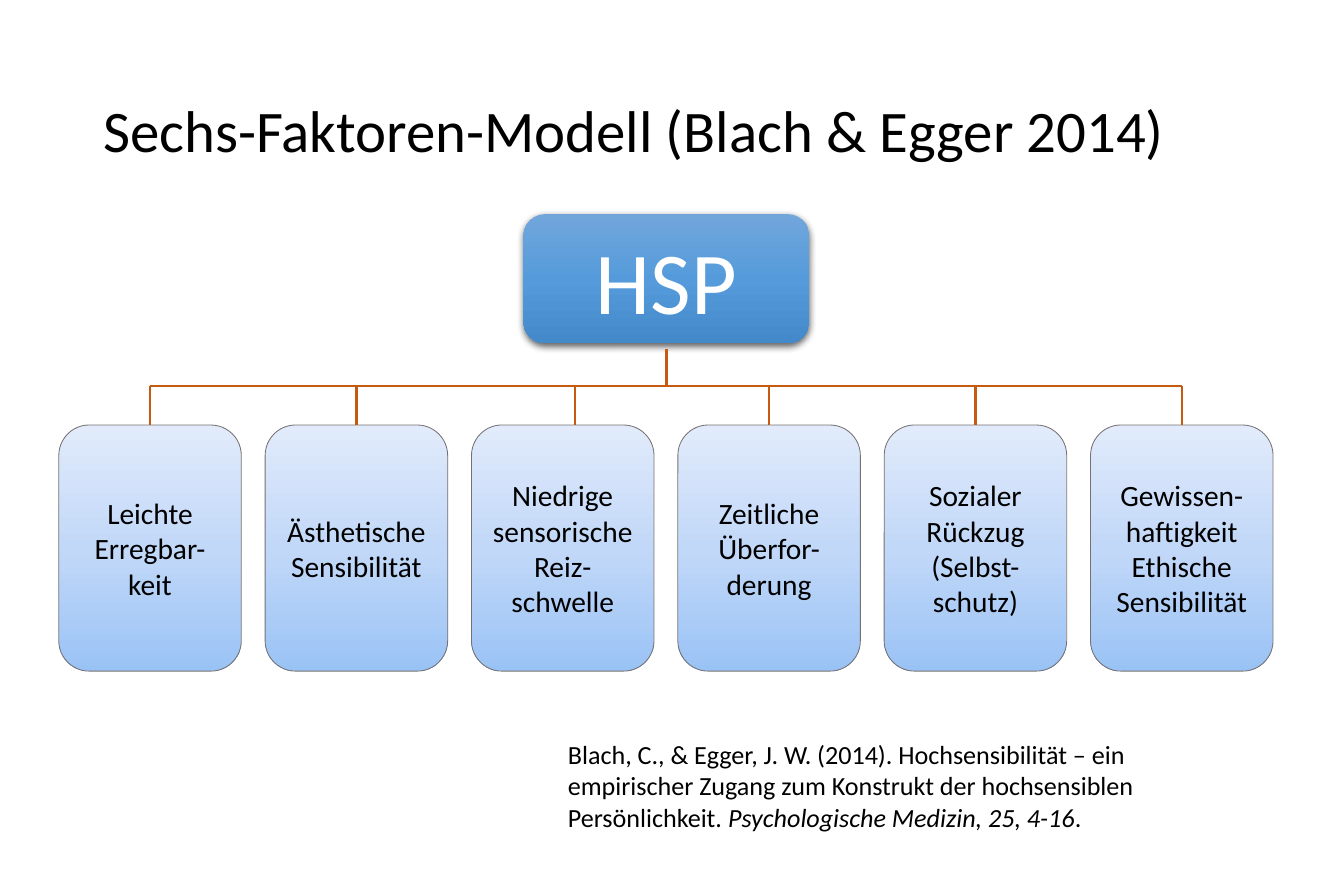
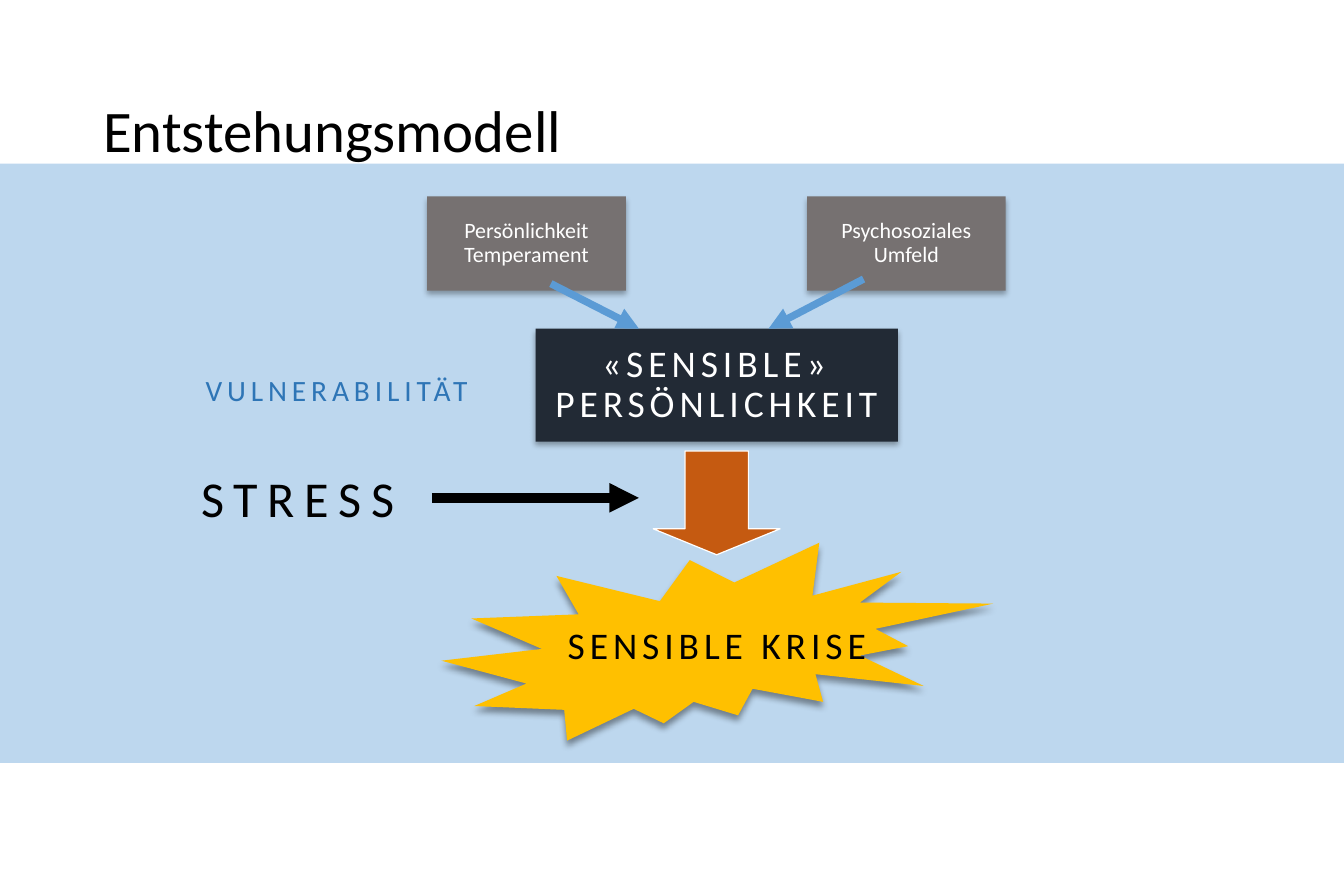
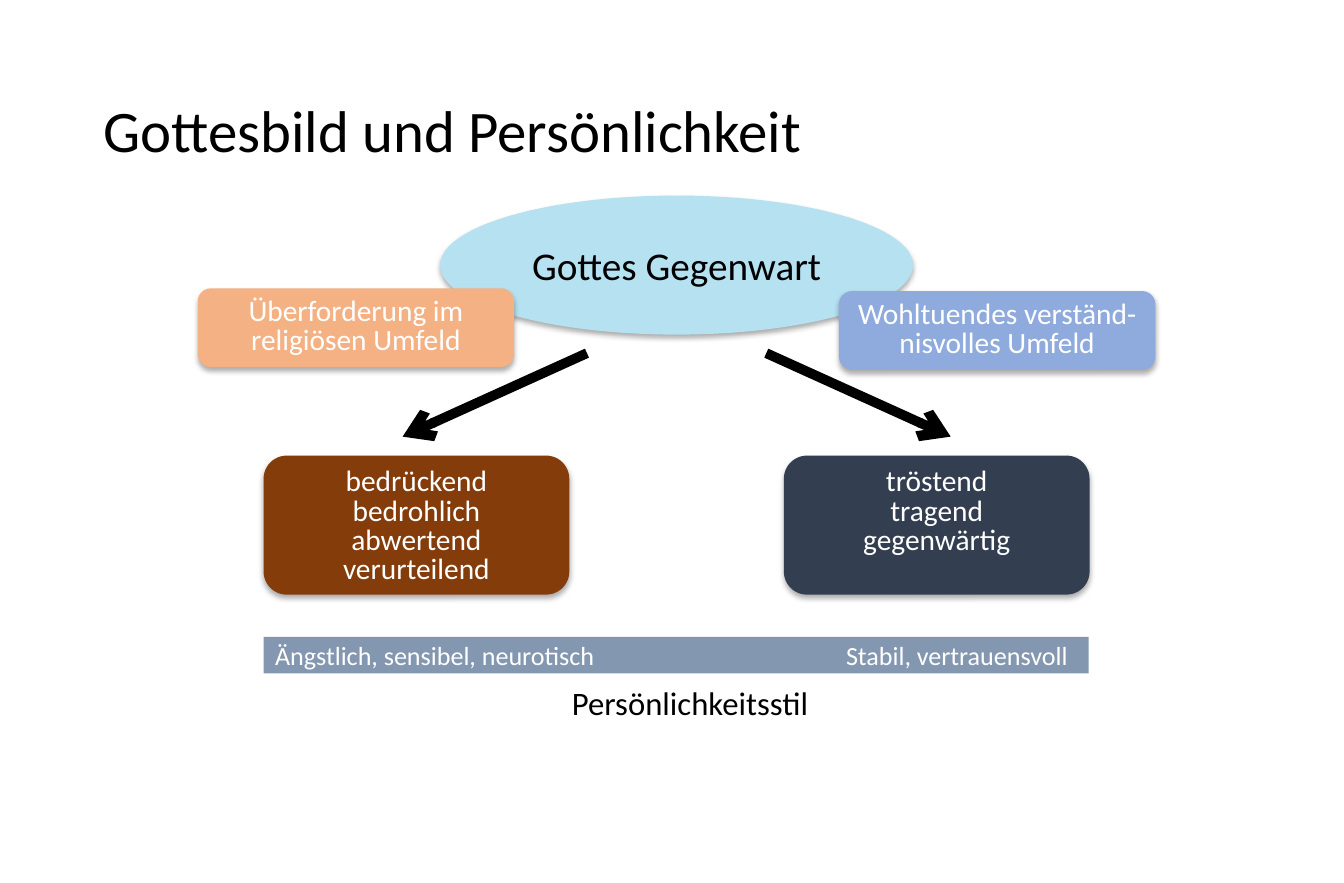
from typing import NamedTuple

from lxml import etree
from pptx import Presentation
from pptx.dml.color import RGBColor
from pptx.enum import shapes, text
from pptx.oxml import ns
from pptx.util import Cm, Pt

FONT = "Calibri"
BLACK = RGBColor(0x00, 0x00, 0x00)
WHITE = RGBColor(0xFF, 0xFF, 0xFF)
GREY = RGBColor(0x76, 0x71, 0x71)
ORANGE = RGBColor(0xC5, 0x5A, 0x11)
BLUE = RGBColor(0x5B, 0x9B, 0xD5)
DEEP_BLUE = RGBColor(0x2E, 0x75, 0xB6)
PALE_BLUE = RGBColor(0xBD, 0xD7, 0xEE)
NIGHT = RGBColor(0x22, 0x2A, 0x35)
GOLD = RGBColor(0xFF, 0xC0, 0x00)
SKY = RGBColor(0xB5, 0xE1, 0xF1)
BROWN = RGBColor(0x84, 0x3C, 0x0B)
SLATE = RGBColor(0x33, 0x3F, 0x50)
STEEL = RGBColor(0x84, 0x97, 0xB0)
PEACH = RGBColor(0xF4, 0xB1, 0x83)
LAVENDER = RGBColor(0x8F, 0xAA, 0xDC)

# Gradient stops from top to bottom
HSP_STOPS = [RGBColor(0x71, 0xA6, 0xDB), RGBColor(0x55, 0x9B, 0xDB), RGBColor(0x44, 0x8A, 0xCA)]
FACTOR_STOPS = [RGBColor(0xE1, 0xEB, 0xFB), RGBColor(0xC2, 0xD8, 0xF8), RGBColor(0x9A, 0xC3, 0xF5)]

# Shadows straight down: opacity in percent, blur and distance in points
SOFT_SHADOW = (32, 3.5, 2.2)
SEAL_SHADOW = (40, 4, 3)
HSP_SHADOW = (63, 4.5, 1.5)

SHAPE = shapes.MSO_SHAPE
LEFT, CENTER, RIGHT = text.PP_ALIGN.LEFT, text.PP_ALIGN.CENTER, text.PP_ALIGN.RIGHT
TOP, MIDDLE = text.MSO_ANCHOR.TOP, text.MSO_ANCHOR.MIDDLE

FACTORS = [
    ["Leichte Erregbar-keit"],
    ["Ästhetische Sensibilität"],
    ["Niedrige sensorische Reiz-schwelle"],
    ["Zeitliche Überfor-derung"],
    ["Sozialer", "Rückzug", "(Selbst-schutz)"],
    ["Gewissen-haftigkeit", "Ethische", "Sensibilität"],
]
DROP_SHIFTS = [0, 0, 0.26, 0, 0, 0]


class Box(NamedTuple):
    """Lengths in centimetres."""
    left: float
    top: float
    width: float
    height: float

    def inner(self, left, top, width, height):
        return Box(self.left + left, self.top + top, width, height)

    def point(self, x, y):
        return self.left + x, self.top + y

    def mirrored(self, other):
        """Reflects another box about the vertical axis of this one."""
        return Box(2 * self.left + self.width - other.left - other.width,
                   other.top, other.width, other.height)

    def emu(self):
        return [Cm(length) for length in self]


def add_element(parent, tag, **attributes):
    return etree.SubElement(parent, ns.qn(tag), {k: str(v) for k, v in attributes.items()})


def write(holder, paragraphs, size, color=BLACK, align=LEFT, anchor=TOP,
          spacing=None, tracking=0, wrap=True):
    """A paragraph is a string or a list of (string, italic) runs; \\n breaks a line."""
    frame = holder.text_frame
    frame.word_wrap = wrap
    frame.vertical_anchor = anchor
    for index, content in enumerate(paragraphs):
        paragraph = frame.paragraphs[0] if index == 0 else frame.add_paragraph()
        paragraph.alignment = align
        paragraph.line_spacing = spacing
        runs = [(content, False)] if isinstance(content, str) else content
        for words, italic in runs:
            for number, line in enumerate(words.split("\n")):
                if number:
                    paragraph.add_line_break()
                run = paragraph.add_run()
                run.text = line
                run.font.name = FONT
                run.font.size = Pt(size)
                run.font.italic = italic
                run.font.color.rgb = color
                if tracking:
                    run._r.get_or_add_rPr().set("spc", str(tracking * 100))


def add_label(slide, box, paragraphs, size, **style):
    write(slide.shapes.add_textbox(*box.emu()), paragraphs, size, **style)


def add_figure(slide, kind, box, fill, line=None, line_width=0.75, shadow=None):
    """A list as fill gives a vertical gradient."""
    figure = slide.shapes.add_shape(kind, *box.emu())
    if isinstance(fill, list):
        figure.fill.gradient()
        figure.fill.gradient_angle = 270
        stops = figure._element.spPr.find(ns.qn("a:gradFill")).find(ns.qn("a:gsLst"))
        for stop in list(stops):
            stops.remove(stop)
        for index, color in enumerate(fill):
            stop = add_element(stops, "a:gs", pos=index * 100000 // (len(fill) - 1))
            add_element(stop, "a:srgbClr", val=color)
    else:
        figure.fill.solid()
        figure.fill.fore_color.rgb = fill
    if line is None:
        figure.line.fill.background()
    else:
        figure.line.color.rgb = line
        figure.line.width = Pt(line_width)
    figure.shadow.inherit = False
    if shadow:
        opacity, blur, distance = shadow
        effects = figure._element.spPr.find(ns.qn("a:effectLst"))
        outer = add_element(effects, "a:outerShdw", blurRad=int(Pt(blur)), dist=int(Pt(distance)),
                            dir=5400000, algn="ctr", rotWithShape=0)
        shade = add_element(outer, "a:srgbClr", val=BLACK)
        add_element(shade, "a:alpha", val=opacity * 1000)
    return figure


def add_line(slide, start, end, color, width, head=None):
    line = slide.shapes.add_connector(
        shapes.MSO_CONNECTOR.STRAIGHT, *(Cm(length) for length in (*start, *end)))
    line.line.color.rgb = color
    line.line.width = Pt(width)
    if head:
        add_element(line.line._get_or_add_ln(), "a:tailEnd", type=head)
    add_element(line._element.spPr, "a:effectLst")


def add_title(slide, title):
    add_label(slide, Box(1.98, 1.83, 25.02, 2.08), [title], 36, anchor=MIDDLE, spacing=0.9)


def add_factor_tree(slide, box):
    root = box.inner(10.03, 0, 6.17, 2.79)
    hsp = add_figure(slide, SHAPE.ROUNDED_RECTANGLE, root, HSP_STOPS, shadow=HSP_SHADOW)
    write(hsp, ["HSP"], 54, WHITE, CENTER, MIDDLE)

    card_width, card_height, bar_gap = 3.94, 5.31, 0.84
    card_top = box.height - card_height
    bar_y = card_top - bar_gap
    pitch = (box.width - card_width) / (len(FACTORS) - 1)
    for index, (factor, shift) in enumerate(zip(FACTORS, DROP_SHIFTS)):
        place = box.inner(index * pitch, card_top, card_width, card_height)
        card = add_figure(slide, SHAPE.ROUNDED_RECTANGLE, place, FACTOR_STOPS, GREY, 0.5)
        write(card, factor, 18, align=CENTER, anchor=MIDDLE)
        drop_x = index * pitch + card_width / 2 + shift
        add_line(slide, box.point(drop_x, bar_y), box.point(drop_x, card_top), ORANGE, 1.5)

    add_line(slide, box.point(card_width / 2, bar_y),
             box.point(box.width - card_width / 2, bar_y), ORANGE, 1.5)
    stem_x = root.left - box.left + root.width / 2
    add_line(slide, box.point(stem_x, root.height + 0.13), box.point(stem_x, bar_y), ORANGE, 1.5)


def add_crisis_model(slide, band):
    add_figure(slide, SHAPE.RECTANGLE, band, PALE_BLUE)
    boxed = dict(color=WHITE, align=CENTER, anchor=MIDDLE, spacing=0.9, wrap=False)
    spaced = dict(align=CENTER, spacing=0.9, tracking=3)

    personality = add_figure(slide, SHAPE.RECTANGLE, band.inner(11.56, 3.56, 7.82, 2.44),
                             NIGHT, shadow=SOFT_SHADOW)
    write(personality, ["«SENSIBLE»\nPERSÖNLICHKEIT"], 23, tracking=3, **boxed)
    add_figure(slide, SHAPE.EXPLOSION2, band.inner(9.53, 8.18, 11.91, 4.27),
               GOLD, shadow=SEAL_SHADOW)
    add_label(slide, band.inner(10.69, 9.86, 9.58, 1.14), ["SENSIBLE KRISE"], 23,
              anchor=MIDDLE, **spaced)

    origins = [
        (9.22, "Persönlichkeit\nTemperament", (11.89, 2.59), (13.79, 3.56)),
        (17.42, "Psychosoziales\nUmfeld", (18.64, 2.49), (16.59, 3.56)),
    ]
    for left, words, start, end in origins:
        origin = add_figure(slide, SHAPE.RECTANGLE, band.inner(left, 0.71, 4.29, 2.03),
                            GREY, shadow=SOFT_SHADOW)
        write(origin, [words], 13.4, **boxed)
        add_line(slide, band.point(*start), band.point(*end), BLUE, 4.5, "triangle")

    crisis_arrow = add_figure(slide, SHAPE.DOWN_ARROW, band.inner(14.1, 6.2, 2.74, 2.24),
                              ORANGE, WHITE)
    crisis_arrow.adjustments[0] = 0.5
    crisis_arrow.adjustments[1] = 0.25
    add_label(slide, band.inner(4.09, 6.43, 5.41, 1.57), ["STRESS"], 30.7, tracking=6)
    add_line(slide, band.point(9.32, 7.21), band.point(13.79, 7.21), BLACK, 6, "triangle")
    add_label(slide, band.inner(3.84, 4.45, 6.86, 0.94), ["VULNERABILITÄT"], 18,
              color=DEEP_BLUE, **spaced)


def add_image_of_god(slide, box):
    presence = add_figure(slide, SHAPE.OVAL, box.inner(5.23, 0, 10.21, 3), SKY, shadow=SOFT_SHADOW)
    write(presence, ["Gottes Gegenwart"], 24, align=CENTER, anchor=MIDDLE)

    def add_card(place, fill, lines):
        card = add_figure(slide, SHAPE.ROUNDED_RECTANGLE, place, fill, shadow=SOFT_SHADOW)
        write(card, lines, 18, WHITE, CENTER, spacing=Pt(18))

    for x_start, x_end in [(8.4, 4.42), (box.width - 8.4, box.width - 4.42)]:
        add_line(slide, box.point(x_start, 3.4), box.point(x_end, 5.2), BLACK, 6, "arrow")

    effect = box.inner(1.42, 5.61, 6.6, 3)
    add_card(effect, BROWN, ["bedrückend", "bedrohlich", "abwertend", "verurteilend"])
    add_card(box.mirrored(effect), SLATE, ["tröstend", "tragend", "gegenwärtig"])
    setting = box.inner(0, 2, 6.83, 1.7)
    add_card(setting, PEACH, ["Überforderung im religiösen Umfeld"])
    add_card(box.mirrored(setting).inner(0, 0.06, 6.83, 1.7), LAVENDER,
             ["Wohltuendes verständ-nisvolles Umfeld"])

    scale = box.inner(1.42, 9.52, 17.81, 0.79)
    add_figure(slide, SHAPE.RECTANGLE, scale, STEEL)
    add_label(slide, scale.inner(0, -0.07, 8.1, 0.94), ["Ängstlich, sensibel, neurotisch"], 16,
              color=WHITE)
    add_label(slide, scale.inner(11.51, -0.07, 6.1, 0.94), ["Stabil, vertrauensvoll"], 16,
              color=WHITE, align=RIGHT)
    add_label(slide, scale.inner(5.41, 0.87, 7.59, 1.12), ["Persönlichkeitsstil"], 20,
              align=CENTER)


def main():
    deck = Presentation()
    deck.slide_width, deck.slide_height = Cm(29.01), Cm(19.05)
    blank = deck.slide_layouts[6]

    factors = deck.slides.add_slide(blank)
    add_title(factors, "Sechs-Faktoren-Modell (Blach & Egger 2014)")
    add_factor_tree(factors, Box(1.27, 4.62, 26.21, 9.86))
    add_label(factors, Box(12.01, 15.8, 12.8, 2.31), [[
        ("Blach, C., & Egger, J. W. (2014). Hochsensibilität – ein empirischer Zugang "
         "zum Konstrukt der hochsensiblen Persönlichkeit. ", False),
        ("Psychologische Medizin, 25, 4-16", True),
        (".", False),
    ]], 16)

    origin = deck.slides.add_slide(blank)
    add_crisis_model(origin, Box(0, 3.53, 29.01, 12.93))
    add_title(origin, "Entstehungsmodell")

    image_of_god = deck.slides.add_slide(blank)
    add_title(image_of_god, "Gottesbild und Persönlichkeit")
    add_image_of_god(image_of_god, Box(4.27, 4.22, 20.67, 11.51))

    deck.save("out.pptx")


if __name__ == "__main__":
    main()
